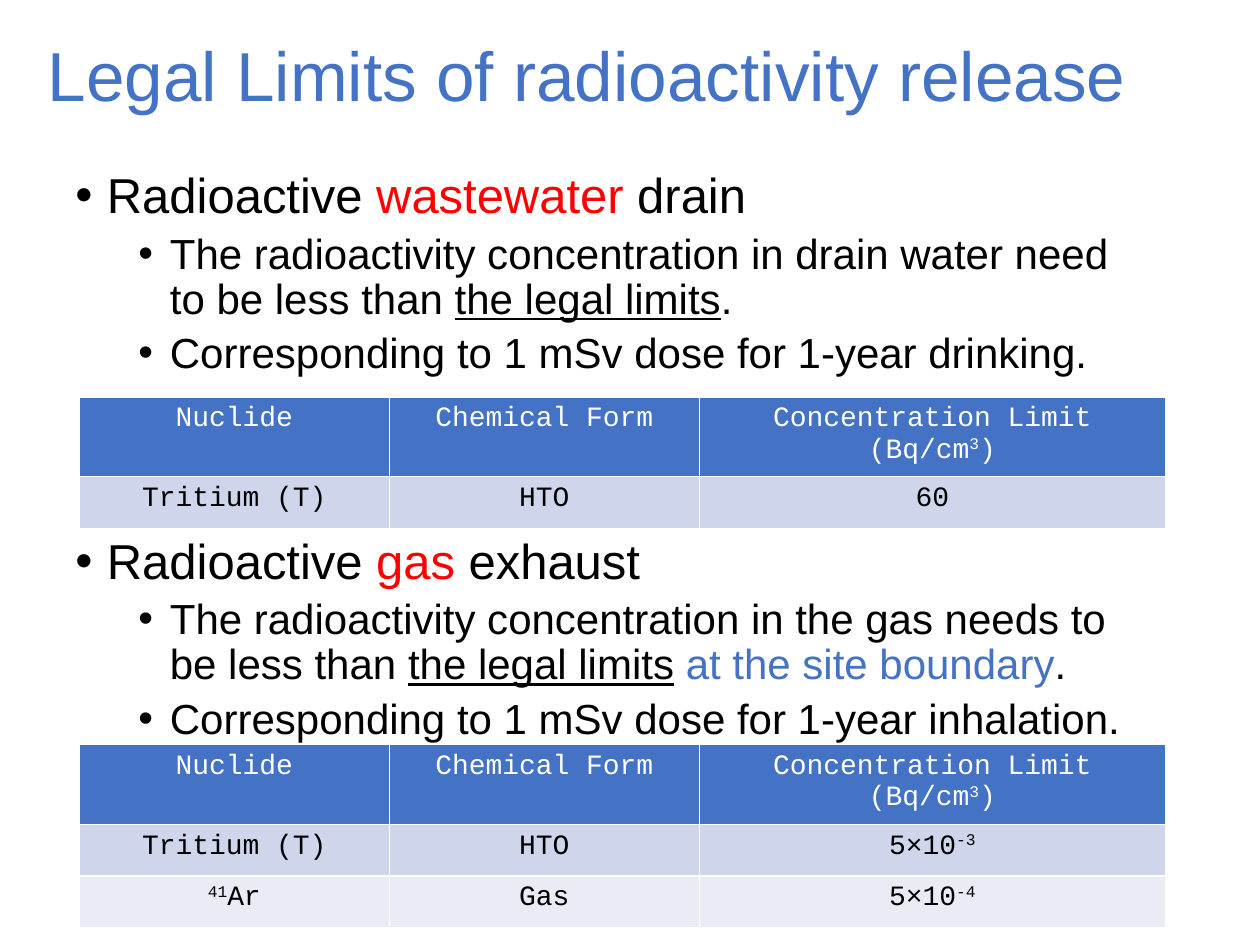
from dataclasses import dataclass

from lxml import etree
from pptx import Presentation
from pptx.dml.color import RGBColor
from pptx.enum.text import MSO_ANCHOR, PP_ALIGN
from pptx.oxml.ns import qn
from pptx.util import Inches, Pt

CENTER = PP_ALIGN.CENTER
MIDDLE = MSO_ANCHOR.MIDDLE
TOP = MSO_ANCHOR.TOP


@dataclass(frozen=True)
class Theme:
    blue: str = "4472C4"
    red: str = "FF0000"
    black: str = "000000"
    white: str = "FFFFFF"
    bands: tuple = ("CFD5EA", "E9EBF5")
    sans: str = "Arial"
    mono: str = "Courier New"
    title: float = 39.6
    levels: tuple = (28, 24)
    gaps: tuple = (10, 5)
    cell: int = 16


THEME = Theme()
RED = {"color": THEME.red}
BLUE = {"color": THEME.blue}
LINE = {"underline": True}
SUPER = {"raised": True}

# A line is a list of runs; a run is a string or a (text, format) pair.
WATER = [
    (0, ["Radioactive ", ("wastewater ", RED), "drain"]),
    (1, ["The radioactivity concentration in drain water need to be less than ",
         ("the legal limits", LINE), "."]),
    (1, ["Corresponding to 1 mSv dose for 1-year drinking."]),
]
GAS = [
    (0, ["Radioactive ", ("gas ", RED), "exhaust"]),
    (1, ["The radioactivity concentration in the gas needs to be less than ",
         ("the legal limits", LINE), " ", ("at the site boundary", BLUE), "."]),
    (1, ["Corresponding to 1 mSv dose for 1-year inhalation."]),
]
HEAD = [["Nuclide"], ["Chemical Form"],
        ["Concentration Limit (Bq/cm", ("3", SUPER), ")"]]
TRITIUM = [["Tritium (T)"], ["HTO"]]
WATER_ROWS = [TRITIUM + [["60"]]]
GAS_ROWS = [
    TRITIUM + [["5×10", ("-3", SUPER)]],
    [[("41", SUPER), "Ar"], ["Gas"], ["5×10", ("-4", SUPER)]],
]
COLS = (2.46, 2.46, 3.7)
ROW = 0.41


def rgb(code):
    return RGBColor.from_string(code)


def add_runs(para, runs, base):
    for item in runs:
        text, extra = (item, {}) if isinstance(item, str) else item
        style = {**base, **extra}
        run = para.add_run()
        run.text = text
        run.font.color.rgb = rgb(style.pop("color"))
        if style.pop("raised", False):
            run.font._element.set("baseline", "30000")
        for name, value in style.items():
            setattr(run.font, name, value)


def add_bullet(para, level):
    """Give the paragraph a dot and a hanging indent."""
    props = para._p.get_or_add_pPr()
    props.set("marL", str(Inches(0.25 + 0.5 * level)))
    props.set("indent", str(Inches(-0.25)))
    etree.SubElement(props, qn("a:buFont")).set("typeface", THEME.sans)
    etree.SubElement(props, qn("a:buChar")).set("char", "•")


def add_box(slide, left, top, width, height, anchor):
    box = slide.shapes.add_textbox(
        Inches(left), Inches(top), Inches(width), Inches(height))
    frame = box.text_frame
    frame.word_wrap = True
    frame.vertical_anchor = anchor
    return frame


def add_title(slide, text):
    para = add_box(slide, 0.28, 0.15, 9.6, 0.95, MIDDLE).paragraphs[0]
    para.line_spacing = 0.9
    add_runs(para, [text], {"name": THEME.sans, "size": Pt(THEME.title), **BLUE})


def add_list(slide, top, lines):
    frame = add_box(slide, 0.5, top, 8.62, 1.75, TOP)
    for i, (level, runs) in enumerate(lines):
        para = frame.add_paragraph() if i else frame.paragraphs[0]
        look = {"level": level, "line_spacing": 0.9,
                "space_before": Pt(THEME.gaps[level])}
        for name, value in look.items():
            setattr(para, name, value)
        add_bullet(para, level)
        add_runs(para, runs, {"name": THEME.sans, "color": THEME.black,
                              "size": Pt(THEME.levels[level])})


def fill_cell(cell, runs, fill, color):
    cell.fill.solid()
    cell.fill.fore_color.rgb = rgb(fill)
    para = cell.text_frame.paragraphs[0]
    para.alignment = CENTER
    add_runs(para, runs, {"name": THEME.mono, "size": Pt(THEME.cell),
                          "bold": False, "color": color})


def add_limits(slide, top, body):
    """Add a table of concentration limits under the shared heading."""
    rows = [HEAD] + body
    table = slide.shapes.add_table(
        len(rows), len(COLS), Inches(0.63), Inches(top),
        Inches(sum(COLS)), Inches(ROW * len(rows))).table
    for col, width in zip(table.columns, COLS):
        col.width = Inches(width)
    for r, row in enumerate(rows):
        table.rows[r].height = Inches(ROW)
        fill = THEME.bands[(r - 1) % 2] if r else THEME.blue
        color = THEME.black if r else THEME.white
        for c, runs in enumerate(row):
            fill_cell(table.cell(r, c), runs, fill, color)


def main():
    deck = Presentation()
    deck.slide_width, deck.slide_height = Inches(10), Inches(7.5)
    slide = deck.slides.add_slide(deck.slide_layouts[6])
    add_title(slide, "Legal Limits of radioactivity release")
    add_list(slide, 1.31, WATER)
    add_list(slide, 4.21, GAS)
    add_limits(slide, 3.15, WATER_ROWS)
    add_limits(slide, 5.91, GAS_ROWS)
    deck.save("out.pptx")


if __name__ == "__main__":
    main()
